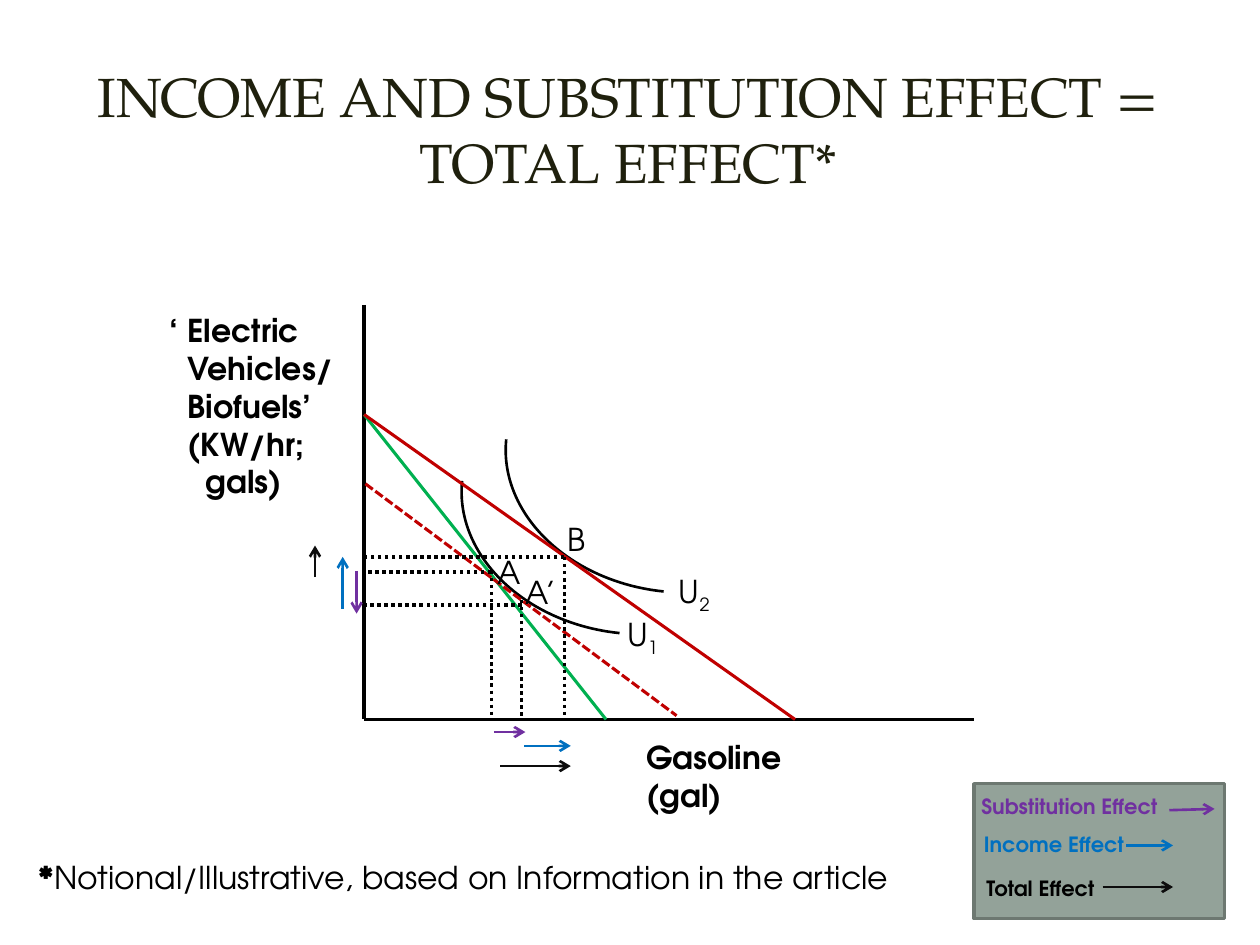
"""Build a slide showing income and substitution effects on indifference curves."""
from lxml import etree
from pptx import Presentation
from pptx.dml.color import RGBColor
from pptx.enum.dml import MSO_LINE
from pptx.enum.shapes import MSO_CONNECTOR, MSO_SHAPE
from pptx.enum.text import MSO_ANCHOR, PP_ALIGN
from pptx.oxml.ns import qn
from pptx.util import Pt

PX = 9144
COLORS = {
    "black": "000000", "total": "0D0D0D", "income": "0070C0", "substitution": "7030A0",
    "green": "00B050", "red": "C00000", "title": "1F200D",
    "legend": "93A299", "legend_line": "6D7871",
}
SANS, SERIF = "TeX Gyre Adventor", "TeX Gyre Pagella"

prs = Presentation()
prs.slide_width, prs.slide_height = 1000 * PX, 750 * PX
s = prs.slides.add_slide(prs.slide_layouts[6])


def add_line(x1, y1, x2, y2, color="black", width=2, dash=None, arrow=False):
    cx = s.shapes.add_connector(MSO_CONNECTOR.STRAIGHT, x1 * PX, y1 * PX, x2 * PX, y2 * PX)
    cx.line.color.rgb = RGBColor.from_string(COLORS[color])
    cx.line.width = Pt(width)
    if dash:
        cx.line.dash_style = dash
    if arrow:
        etree.SubElement(cx.line._get_or_add_ln(), qn("a:tailEnd"), type="arrow")
    etree.SubElement(cx._element.spPr, qn("a:effectLst"))


def add_text(x, y, w, h, lines, size=18, color="black", bold=False, font=SANS):
    tf = s.shapes.add_textbox(x * PX, y * PX, w * PX, h * PX).text_frame
    tf.word_wrap = True
    for i, line in enumerate(lines):
        p = tf.paragraphs[0] if i == 0 else tf.add_paragraph()
        p.add_run().text = line
        p.font.size, p.font.name, p.font.bold = Pt(size), font, bold
        p.font.color.rgb = RGBColor.from_string(COLORS[color])
    return tf


sp = s.shapes.add_shape(MSO_SHAPE.RECTANGLE, 773 * PX, 622 * PX, 199 * PX, 107 * PX)
sp.shadow.inherit = False
sp.fill.solid()
sp.fill.fore_color.rgb = RGBColor.from_string(COLORS["legend"])
sp.line.color.rgb = RGBColor.from_string(COLORS["legend_line"])
sp.line.width = Pt(2)

tf = add_text(47, 45, 903, 114, ["INCOME AND SUBSTITUTION EFFECT = TOTAL EFFECT*"],
              31.5, "title", font=SERIF)
tf.vertical_anchor = MSO_ANCHOR.MIDDLE
tf.paragraphs[0].alignment = PP_ALIGN.CENTER

left, base = 289, 571
add_line(left, 242, left, base)
add_line(773, base, left, base)

for x, y in [(401, 255), (366, 288)]:
    sp = s.shapes.add_shape(MSO_SHAPE.ARC, x * PX, y * PX, 273 * PX, 215 * PX)
    sp.rotation = 185.8
    sp.shadow.inherit = False
    sp.fill.background()
    sp.line.color.rgb = RGBColor.from_string(COLORS["black"])
    sp.line.width = Pt(1.5)

add_line(left, 329, 481, base, "green", 1.75)
add_line(left, 329, 631, base, "red", 1.75)
add_line(290, 384, 537, 568, "red", 1.75, MSO_LINE.SQUARE_DOT)

for x, top, y in [(390, 453, 454), (414, 476, 480), (448, 442, 442)]:
    add_line(x, top, x, base, dash=MSO_LINE.ROUND_DOT)
    add_line(x, y, left, y, dash=MSO_LINE.ROUND_DOT)

add_text(503, 581, 185, 68, ["Gasoline (gal)"], bold=True)
tf = add_text(125, 242, 165, 162,
              ["‘ Electric", "Vehicles/", "Biofuels’", "(KW/hr;", "gals)"], bold=True)
for p, indent in zip(tf.paragraphs, [0, 14, 14, 14, 28]):
    p._p.get_or_add_pPr().set("marL", str(indent * PX))

for x, y, name, sub in [(385, 434, "A", ""), (407, 450, "A’", ""), (441, 408, "B", ""),
                        (488, 483, "U", "1"), (529, 449, "U", "2")]:
    tf = add_text(x, y, 50, 40, [name])
    if sub:
        r = tf.paragraphs[0].add_run()
        r.text = sub
        r._r.get_or_add_rPr().set("baseline", "-25000")

for x1, y1, x2, y2, effect in [
    (392, 581, 417, 581, "substitution"), (283, 453, 283, 487, "substitution"),
    (416, 592, 453, 592, "income"), (272, 483, 272, 442, "income"),
    (397, 608, 453, 608, "total"), (250, 458, 250, 433, "total"),
    (928, 643, 964, 642, "substitution"), (894, 671, 931, 671, "income"),
    (875, 704, 931, 704, "total"),
]:
    add_line(x1, y1, x2, y2, effect, 1.5, arrow=True)

for x, y, label, color in [(769, 625, "Substitution Effect", "substitution"),
                           (771, 655, "Income Effect", "income"),
                           (773, 690, "Total Effect", "black")]:
    add_text(x, y, 170, 30, [label], 12, color, True)

tf = add_text(21, 676, 728, 40, ["*"])
p = tf.paragraphs[0]
p.runs[0].font.bold = True
p.add_run().text = "Notional/Illustrative, based on Information in the article"

prs.save("out.pptx")
